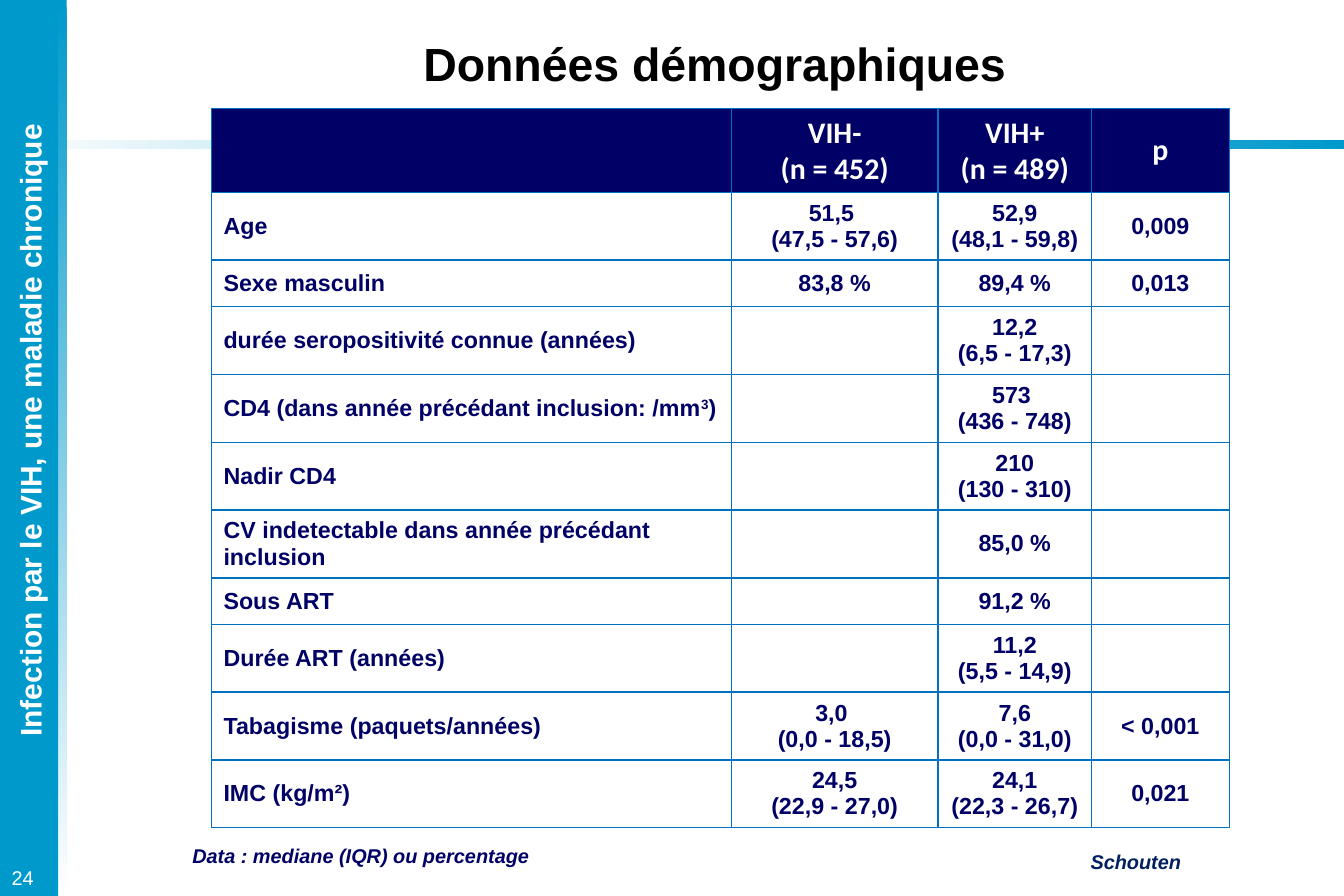
import pptx
import pptx.dml.color
import pptx.enum.shapes
import pptx.enum.text
import pptx.oxml
import pptx.oxml.ns
import pptx.util
from lxml import etree

Cm = pptx.util.Cm
Pt = pptx.util.Pt
RGBColor = pptx.dml.color.RGBColor
ALIGN = pptx.enum.text.PP_ALIGN
ANCHOR = pptx.enum.text.MSO_ANCHOR
qn = pptx.oxml.ns.qn

BLUE = RGBColor(0x00, 0x99, 0xCC)
WHITE = RGBColor(0xFF, 0xFF, 0xFF)
BLACK = RGBColor(0x00, 0x00, 0x00)
NAVY = RGBColor(0x00, 0x00, 0x66)
DARK_BLUE = RGBColor(0x00, 0x20, 0x60)
BORDER = RGBColor(0x00, 0x70, 0xC0)


def format_runs(paragraph, color, formats):
    for run in paragraph.runs:
        for name, value in formats.items():
            setattr(run.font, name, value)
        run.font.color.rgb = color


def add_label(slide, text, box, color, formats, frame_formats, alignment=ALIGN.LEFT):
    shape = slide.shapes.add_textbox(*[Cm(length) for length in box])
    frame = shape.text_frame
    for name, value in frame_formats.items():
        setattr(frame, name, value)
    paragraph = frame.paragraphs[0]
    paragraph.text = text
    paragraph.alignment = alignment
    format_runs(paragraph, color, formats)
    return shape


presentation = pptx.Presentation()
presentation.slide_width = Cm(28.58)
presentation.slide_height = Cm(19.05)
slide = presentation.slides.add_slide(presentation.slide_layouts[5])

bars = [
    ((0, 2.97, 28.58, 0.2), (WHITE, BLUE), 0),
    ((0.18, 0, 1.24, 19.05), (BLUE, WHITE), 270),
    ((0, 0, 1.24, 19.05), (BLUE,), None),
]
for box, colors, angle in bars:
    bar = slide.shapes.add_shape(
        pptx.enum.shapes.MSO_SHAPE.RECTANGLE, *[Cm(length) for length in box]
    )
    bar.shadow.inherit = False
    bar.line.fill.background()
    if angle is None:
        bar.fill.solid()
        bar.fill.fore_color.rgb = colors[0]
    else:
        bar.fill.gradient()
        bar.fill.gradient_angle = angle
        for stop, color in zip(bar.fill.gradient_stops, colors):
            stop.color.rgb = color

title = slide.shapes.title
title_box = {"left": 3.89, "top": 0.56, "width": 22.61, "height": 1.55}
for name, value in title_box.items():
    setattr(title, name, Cm(value))
title.text_frame.text = "Données démographiques"
title.text_frame.vertical_anchor = ANCHOR.MIDDLE
title_paragraph = title.text_frame.paragraphs[0]
title_paragraph.alignment = ALIGN.CENTER
format_runs(title_paragraph, BLACK, {"name": "Arial", "size": Pt(28), "bold": True})

chapter = add_label(
    slide, "Infection par le VIH, une maladie chronique", (-6.2, 8.64, 13.67, 1.02),
    WHITE, {"name": "Arial", "size": Pt(18), "bold": True},
    {"word_wrap": False}, ALIGN.CENTER,
)
chapter.rotation = 270
add_label(
    slide, "24", (0, 18.29, 1.6, 0.76),
    WHITE, {"name": "Arial", "size": Pt(12)}, {"word_wrap": True},
)
note_font = {"name": "Arial", "size": Pt(12), "bold": True, "italic": True}
add_label(
    slide, "Data : mediane (IQR) ou percentage", (4.09, 17.93, 8.61, 0.64),
    NAVY, note_font,
    {"word_wrap": True, "margin_left": 0, "margin_top": 0, "margin_right": 0},
)
add_label(
    slide, "Schouten", (22.91, 17.93, 2.46, 0.76),
    DARK_BLUE, note_font, {"word_wrap": False}, ALIGN.RIGHT,
)

rows = [
    ("", "VIH-\n(n = 452)", "VIH+\n(n = 489)", "p"),
    ("Age", "51,5 \n(47,5 - 57,6)", "52,9\n(48,1 - 59,8)", "0,009"),
    ("Sexe masculin", "83,8 %", "89,4 %", "0,013"),
    ("durée seropositivité connue (années)", "", "12,2\n(6,5 - 17,3)", ""),
    ("CD4 (dans année précédant inclusion: /mm", "", "573 \n(436 - 748)", ""),
    ("Nadir CD4", "", "210\n(130 - 310)", ""),
    ("CV indetectable dans année précédant inclusion", "", "85,0 %", ""),
    ("Sous ART", "", "91,2 %", ""),
    ("Durée ART (années)", "", "11,2\n(5,5 - 14,9)", ""),
    ("Tabagisme (paquets/années)", "3,0 \n(0,0 - 18,5)", "7,6\n(0,0 - 31,0)", "< 0,001"),
    ("IMC (kg/m²)", "24,5\n(22,9 - 27,0)", "24,1\n(22,3 - 26,7)", "0,021"),
]
column_widths = [11.05, 4.4, 3.26, 2.93]
row_heights = [1.78] + [
    0.99 if label in ("Sexe masculin", "Sous ART") else 1.44 for label, *_ in rows[1:]
]
table = slide.shapes.add_table(
    len(rows), len(column_widths), Cm(4.5), Cm(2.31),
    Cm(sum(column_widths)), Cm(sum(row_heights)),
).table
table.first_row = False
table.horz_banding = False
for column, width in zip(table.columns, column_widths):
    column.width = Cm(width)

for row_index, (texts, height) in enumerate(zip(rows, row_heights)):
    table.rows[row_index].height = Cm(height)
    is_header = row_index == 0
    size = 18 if is_header else 14
    cell_font = {"name": "Calibri" if is_header else "Arial", "size": Pt(size), "bold": True}
    for column_index, text in enumerate(texts):
        cell = table.cell(row_index, column_index)
        cell.vertical_anchor = ANCHOR.MIDDLE
        paragraph = cell.text_frame.paragraphs[0]
        paragraph.alignment = ALIGN.CENTER if column_index else ALIGN.LEFT
        for line_index, line in enumerate(text.split("\n")):
            if line_index:
                paragraph.add_line_break()
            if line:
                paragraph.add_run().text = line
        if text.endswith("/mm"):
            exponent = paragraph.add_run()
            exponent.text = "3"
            exponent.font._element.set("baseline", "30000")
            paragraph.add_run().text = ")"
        format_runs(paragraph, WHITE if is_header else NAVY, cell_font)
        for line_break in paragraph._p.findall(qn("a:br")):
            etree.SubElement(line_break, qn("a:rPr"), sz=str(size * 100))
        if not text:
            etree.SubElement(paragraph._p, qn("a:endParaRPr"), sz=str(size * 100))

        properties = cell._tc.get_or_add_tcPr()
        for side in ("lnL", "lnR", "lnT", "lnB"):
            line = etree.SubElement(properties, qn(f"a:{side}"), w=str(Pt(1)))
            fill = etree.SubElement(line, qn("a:solidFill"))
            etree.SubElement(fill, qn("a:srgbClr"), val=str(BORDER))
        if is_header:
            cell.fill.solid()
            cell.fill.fore_color.rgb = NAVY
        else:
            cell.fill.background()

presentation.save("out.pptx")
